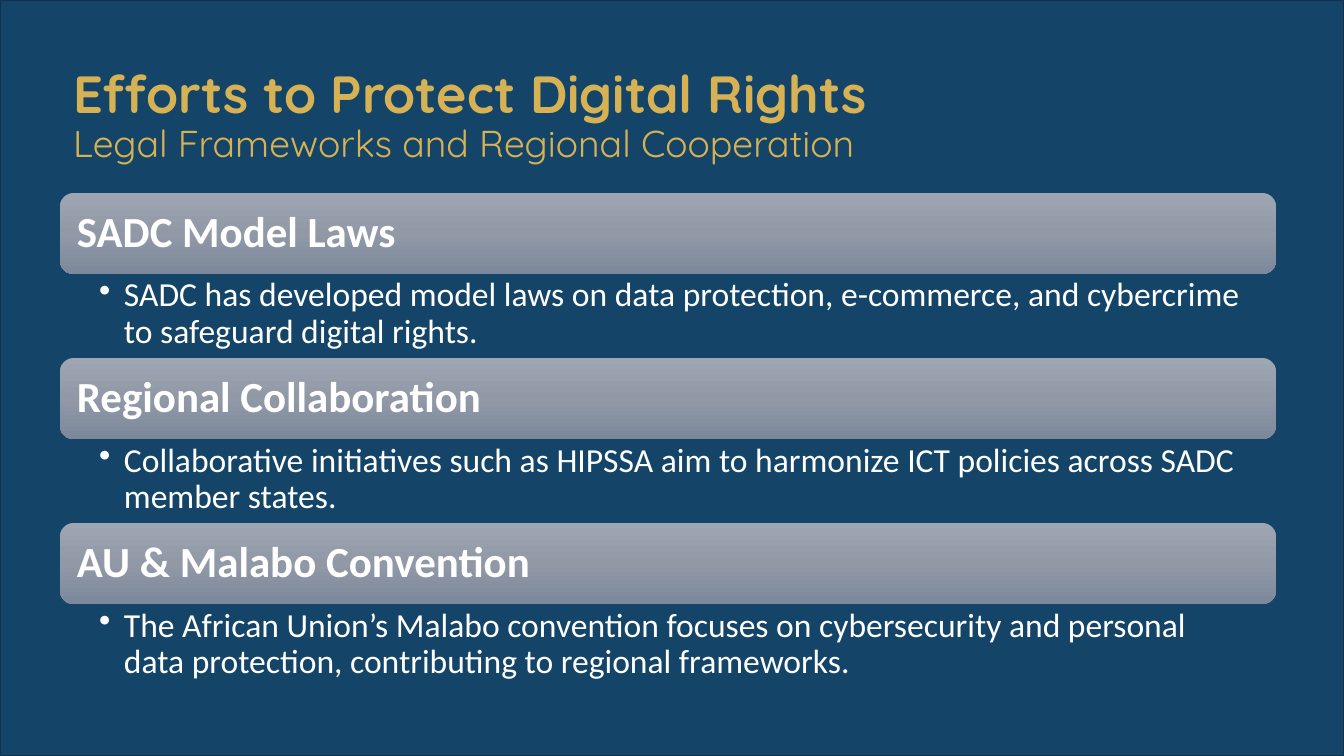
from copy import deepcopy

from pptx import Presentation
from pptx.dml.color import RGBColor
from pptx.enum.shapes import MSO_SHAPE
from pptx.enum.text import MSO_ANCHOR, PP_ALIGN
from pptx.oxml.ns import qn
from pptx.util import Pt

TITLE = "Efforts to Protect Digital Rights"
SUBTITLE = "Legal Frameworks and Regional Cooperation"
EFFORTS = [
    ("SADC Model Laws",
     "SADC has developed model laws on data protection, e-commerce, "
     "and cybercrime to safeguard digital rights."),
    ("Regional Collaboration",
     "Collaborative initiatives such as HIPSSA aim to harmonize ICT "
     "policies across SADC member states."),
    ("AU & Malabo Convention",
     "The African Union’s Malabo convention focuses on cybersecurity and "
     "personal data protection, contributing to regional frameworks."),
]
COLORS = {"back": "144569", "edge": "0F334E", "gold": "D7B254", "white": "FFFFFF"}
BAR_STOPS = [(0, "9EA6B3"), (0.5, "9199A7"), (1, "7C889B")]

WIDTH, HEIGHT = 1344, 756
LEFT, CONTENT_W = 60, 1216
TITLE_TOP, SUBTITLE_TOP, TITLE_H = 54, 113, 74
BARS_TOP, BAR_H, BODY_H = 193, 81, 84
PAD_X, PAD_Y = 13, 7
BULLET_INDENT = 25


def px(n):
    return round(n * 914400 / 134.4)


def box(left, top, width, height):
    return [px(n) for n in (left, top, width, height)]


def rgb(name):
    return RGBColor.from_string(COLORS[name])


def write(s, text, size, font, color, bold=False, insets=(PAD_X, PAD_Y, PAD_X, PAD_Y),
          anchor=MSO_ANCHOR.TOP, spacing=1.0):
    tf = s.text_frame
    tf.word_wrap = True
    tf.vertical_anchor = anchor
    tf.margin_left, tf.margin_top, tf.margin_right, tf.margin_bottom = map(px, insets)
    p = tf.paragraphs[0]
    p.alignment = PP_ALIGN.LEFT
    p.line_spacing = spacing
    r = p.add_run()
    r.text = text
    r.font.size = Pt(size)
    r.font.name = font
    r.font.bold = bold
    r.font.color.rgb = rgb(color)
    return p


def add_bullet(p):
    pPr = p._p.get_or_add_pPr()
    pPr.set("marL", str(px(BULLET_INDENT)))
    pPr.set("indent", str(-px(BULLET_INDENT)))
    pPr.append(pPr.makeelement(qn("a:buChar"), {"char": "•"}))


def fill_gradient(s, stops):
    s.fill.gradient()
    s.fill.gradient_angle = 270
    gs_list = s._element.spPr.find(".//" + qn("a:gsLst"))
    gs_list.insert(1, deepcopy(gs_list[0]))
    for stop, (position, color) in zip(s.fill.gradient_stops, stops):
        stop.position = position
        stop.color.rgb = RGBColor.from_string(color)


prs = Presentation()
prs.slide_width, prs.slide_height = px(WIDTH), px(HEIGHT)
slide = prs.slides.add_slide(prs.slide_layouts[5])
shapes = slide.shapes

backdrop = shapes.add_shape(MSO_SHAPE.RECTANGLE, *box(0, 0, WIDTH, HEIGHT))
backdrop.shadow.inherit = False
backdrop.fill.solid()
backdrop.fill.fore_color.rgb = rgb("back")
backdrop.line.color.rgb = rgb("edge")
backdrop.line.width = Pt(1)
shapes.title._element.addprevious(backdrop._element)

title = shapes.title
title.left, title.top, title.width, title.height = box(LEFT, TITLE_TOP, CONTENT_W, TITLE_H)
write(title, TITLE, 28, "Quicksand", "gold", bold=True)

for i, (heading, detail) in enumerate(EFFORTS):
    top = BARS_TOP + i * (BAR_H + BODY_H)
    bar = shapes.add_shape(MSO_SHAPE.ROUNDED_RECTANGLE, *box(LEFT, top, CONTENT_W, BAR_H))
    bar.shadow.inherit = False
    bar.line.fill.background()
    fill_gradient(bar, BAR_STOPS)
    write(bar, heading, 23, "Calibri", "white", bold=True,
          anchor=MSO_ANCHOR.MIDDLE, spacing=0.9)

    body = shapes.add_textbox(*box(LEFT, top + BAR_H, CONTENT_W, BODY_H))
    add_bullet(write(body, detail, 18, "Calibri", "white",
                     insets=(39, 4, 24, 4), spacing=0.9))

subtitle = shapes.add_textbox(*box(LEFT, SUBTITLE_TOP, CONTENT_W, TITLE_H))
write(subtitle, SUBTITLE, 20, "Quicksand", "gold")

prs.save("out.pptx")
